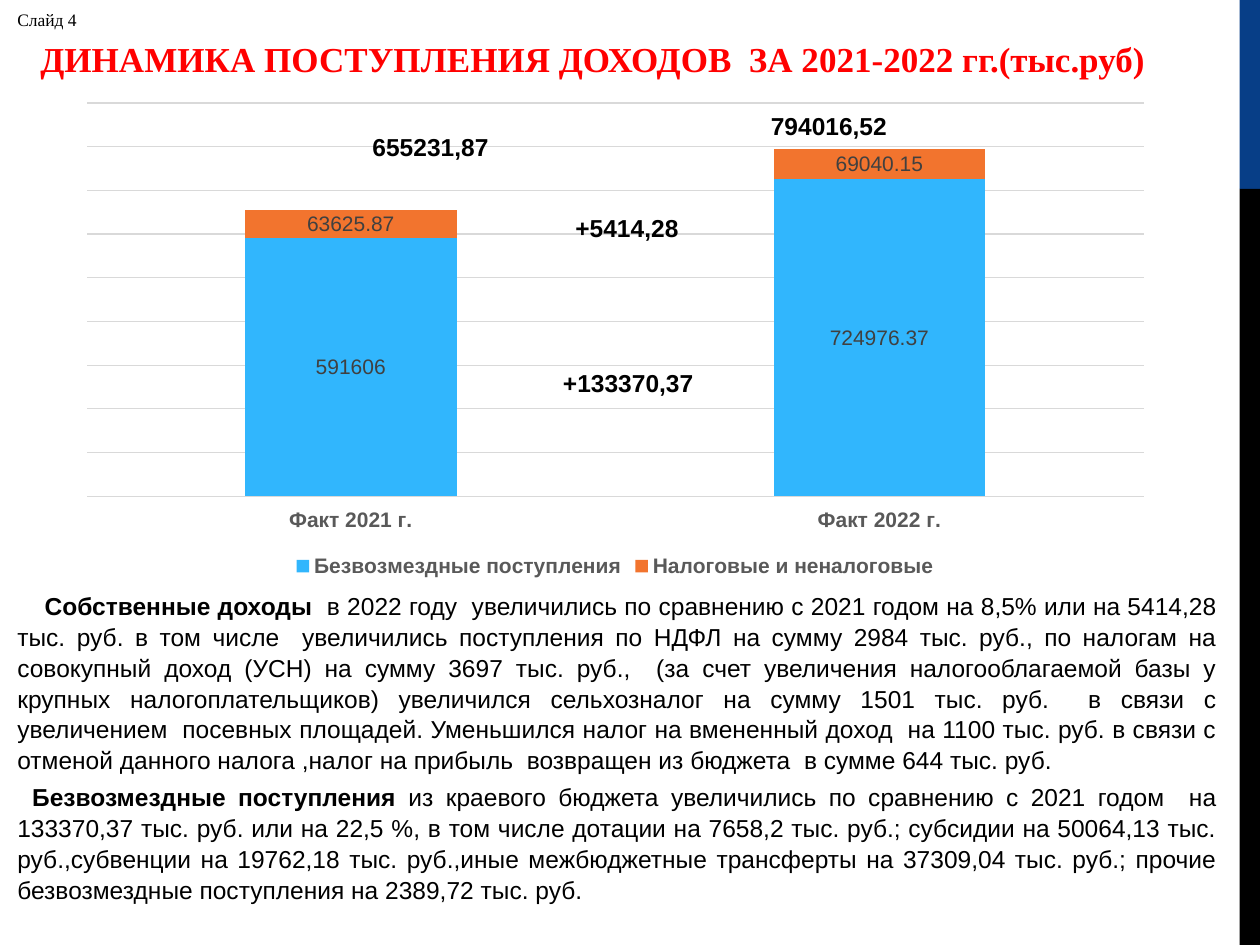
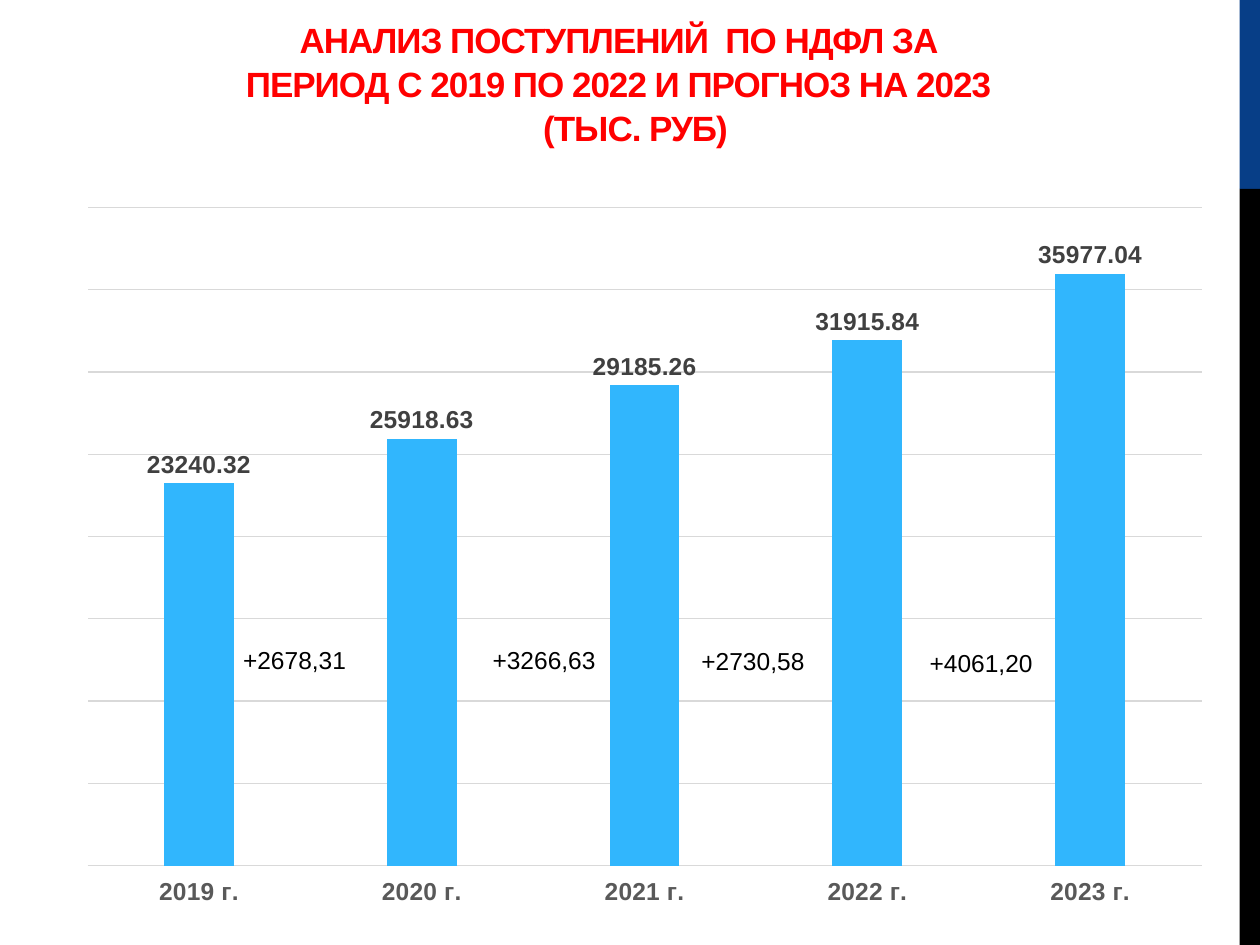
"""Builds two slides on budget income: growth by source and income tax by year."""
from pptx import Presentation
from pptx.chart.data import CategoryChartData
from pptx.dml.color import RGBColor
from pptx.enum.chart import XL_CHART_TYPE as ChartType
from pptx.enum.chart import XL_LABEL_POSITION as LabelPosition
from pptx.enum.chart import XL_LEGEND_POSITION as LegendPosition
from pptx.enum.chart import XL_TICK_LABEL_POSITION as TickLabels
from pptx.enum.chart import XL_TICK_MARK as TickMark
from pptx.enum.shapes import MSO_SHAPE as Shape
from pptx.enum.text import MSO_ANCHOR as Anchor
from pptx.enum.text import PP_ALIGN as Align
from pptx.util import Cm, Pt

COLORS = {
    "navy": "073E87", "black": "000000", "red": "FF0000", "sky": "31B6FD",
    "orange": "F2742E", "grid": "D9D9D9", "axis": "595959", "label": "404040",
}
SANS, SERIF = "Arial", "Times New Roman"

OWN_INCOME = (
    "в 2022 году  увеличились по сравнению с 2021 годом на 8,5% или на 5414,28 тыс. руб. "
    "в том числе  увеличились поступления по НДФЛ на сумму 2984 тыс. руб., по налогам на "
    "совокупный доход (УСН) на сумму 3697 тыс. руб.,  (за счет увеличения налогооблагаемой "
    "базы у крупных налогоплательщиков) увеличился сельхозналог на сумму 1501 тыс. руб.  "
    "в связи с увеличением  посевных площадей. Уменьшился налог на вмененный доход  на 1100 "
    "тыс. руб. в связи с отменой данного налога ,налог на прибыль  возвращен из бюджета  "
    "в сумме 644 тыс. руб."
)
GRANTS = (
    " из краевого бюджета увеличились по сравнению с 2021 годом  на 133370,37 тыс. руб. "
    "или на 22,5 %, в том числе дотации на 7658,2 тыс. руб.; субсидии на 50064,13 тыс. "
    "руб.,субвенции на 19762,18 тыс. руб.,иные межбюджетные трансферты на 37309,04 тыс. "
    "руб.; прочие безвозмездные поступления на 2389,72 тыс. руб."
)


def rgb(name):
    """Return the named colour."""
    return RGBColor.from_string(COLORS[name])


class Deck:
    """Holds the style and the current slide."""

    def __init__(self):
        """Start an empty 4:3 deck."""
        self.deck = Presentation()
        self.deck.slide_width, self.deck.slide_height = Cm(25.4), Cm(19.05)
        self.page = None

    def new_page(self):
        """Add a slide with the two side bands."""
        self.page = self.deck.slides.add_slide(self.deck.slide_layouts[6])
        for color, top, height in (("navy", 0, 3.81), ("black", 3.81, 15.24)):
            band = self.page.shapes.add_shape(
                Shape.RECTANGLE, Cm(24.99), Cm(top), Cm(0.41), Cm(height))
            band.shadow.inherit = False
            band.fill.solid()
            band.fill.fore_color.rgb = rgb(color)
            band.line.fill.background()

    def font(self, font, size, color="black", bold=False, name=SANS):
        """Apply size, colour, weight and typeface to a font."""
        font.size, font.bold, font.name = Pt(size), bold, name
        font.color.rgb = rgb(color)

    def frame(self, left, top, width, height, wrap=True):
        """Add a text box and return its text frame."""
        box = self.page.shapes.add_textbox(Cm(left), Cm(top), Cm(width), Cm(height))
        box.text_frame.word_wrap = wrap
        return box.text_frame

    def label(self, text, left, top, width, height=0.86, size=14, wrap=False, **style):
        """Add a one-line text box."""
        para = self.frame(left, top, width, height, wrap).paragraphs[0]
        para.text = text
        self.font(para.font, size, **style)

    def title(self, lines, left, top, width, height, name=SANS, spacing=0, shift=0):
        """Add a centred red title, moving its later lines right by shift."""
        frame = self.frame(left, top, width, height)
        frame.vertical_anchor = Anchor.BOTTOM if len(lines) > 1 else Anchor.TOP
        for index, line in enumerate(lines):
            para = frame.paragraphs[0] if index == 0 else frame.add_paragraph()
            para.text, para.alignment = line, Align.CENTER
            para.line_spacing = 1.05
            properties = para._p.get_or_add_pPr()
            if index:
                properties.set("marL", str(Cm(shift)))
            self.font(para.font, 20, "red", True, name)
            if spacing:
                properties.get_or_add_defRPr().set("spc", str(spacing))

    def body(self, items, left, top, width, height):
        """Add justified paragraphs that open with a bold phrase."""
        frame = self.frame(left, top, width, height)
        for index, (lead, text, indent) in enumerate(items):
            para = frame.paragraphs[0] if index == 0 else frame.add_paragraph()
            para.alignment, para.line_spacing = Align.JUSTIFY, 1.05
            if index:
                para.space_before = Pt(3.6)
            para._p.get_or_add_pPr().set("indent", str(Cm(indent)))
            for words, bold in ((lead, True), (text, False)):
                span = para.add_run()
                span.text = words
                self.font(span.font, 14, bold=bold)

    def columns(self, kind, place, categories, series, top_value, step, gap, overlap,
                axis_size, label_size, bold_labels=False, axis_line=False, legend=False):
        """Add a column chart with a hidden value axis; series hold name, colour, values."""
        data = CategoryChartData()
        data.categories = categories
        for name, color, values in series:
            data.add_series(name, values)
        chart = self.page.shapes.add_chart(kind, *map(Cm, place), data).chart
        self.font(chart.font, 10)
        chart.has_title = False
        chart.has_legend = legend
        if legend:
            chart.legend.position = LegendPosition.BOTTOM
            chart.legend.include_in_layout = False
            self.font(chart.legend.font, 12, "axis", True)

        value_axis = chart.value_axis
        value_axis.minimum_scale, value_axis.maximum_scale = 0, top_value
        value_axis.major_unit = step
        value_axis.visible = False
        value_axis.has_major_gridlines = True
        self.hairline(value_axis.major_gridlines.format.line)

        category_axis = chart.category_axis
        category_axis.major_tick_mark = TickMark.NONE
        category_axis.tick_label_position = TickLabels.LOW
        self.font(category_axis.tick_labels.font, axis_size, "axis", True)
        if axis_line:
            self.hairline(category_axis.format.line)
        else:
            category_axis.format.line.fill.background()

        plot = chart.plots[0]
        plot.gap_width, plot.overlap, plot.vary_by_categories = gap, overlap, False
        stacked = kind == ChartType.COLUMN_STACKED
        for drawn, (name, color, values) in zip(plot.series, series):
            drawn.format.fill.solid()
            drawn.format.fill.fore_color.rgb = rgb(color)
            drawn.invert_if_negative = False
            labels = drawn.data_labels
            labels.show_value = True
            labels.position = LabelPosition.CENTER if stacked else LabelPosition.OUTSIDE_END
            self.font(labels.font, label_size, "label", bold_labels)

    def hairline(self, line):
        """Give a line the thin grid style."""
        line.color.rgb = rgb("grid")
        line.width = Pt(0.75)


def income_page(deck):
    """Draw income by source with its explanation."""
    deck.new_page()
    deck.body([("Собственные доходы  ", OWN_INCOME, 0.55),
               ("Безвозмездные поступления", GRANTS, 0.3)], 0.1, 11.76, 24.69, 7.01)
    deck.title(["ДИНАМИКА ПОСТУПЛЕНИЯ ДОХОДОВ  ЗА 2021-2022 гг.(тыс.руб)"],
               -1.4, 0.58, 26.7, 1.09, SERIF)
    deck.label("Слайд 4", 0.1, 0.05, 1.73, 0.69, size=10, name=SERIF)
    deck.columns(
        ChartType.COLUMN_STACKED, (1.3, 1.88, 22.2, 9.86),
        ["Факт 2021 г.", "Факт 2022 г."],
        [("Безвозмездные поступления", "sky", (591606, 724976.37)),
         ("Налоговые и неналоговые", "orange", (63625.87, 69040.15))],
        900000, 100000, gap=150, overlap=100, axis_size=12, label_size=12, legend=True)
    for text, left, top, width in (
            ("655231,87", 7.26, 2.54, 2.87), ("+5414,28", 11.35, 4.17, 2.59),
            ("+133370,37", 11.1, 7.29, 3.15), ("794016,52", 15.29, 2.11, 2.87)):
        deck.label(text, left, top, width, bold=True)


def tax_page(deck):
    """Draw income tax by year with the yearly growth."""
    deck.new_page()
    deck.title(["АНАЛИЗ ПОСТУПЛЕНИЙ  ПО НДФЛ ЗА ПЕРИОД С 2019 ПО 2022 И ПРОГНОЗ НА 2023",
                "(ТЫС. РУБ)"], 4.5, 0.05, 15.93, 3.07, spacing=-60, shift=0.69)
    deck.columns(
        ChartType.COLUMN_CLUSTERED, (1.3, 3.89, 23.39, 14.66),
        [f"{year} г." for year in range(2019, 2024)],
        [("Series 1", "sky", (23240.32, 25918.63, 29185.26, 31915.84, 35977.04))],
        40000, 5000, gap=219, overlap=-27, axis_size=14, label_size=14,
        bold_labels=True, axis_line=True)
    for text, left, top in (("+2678,31", 4.65, 12.88), ("+3266,63", 9.68, 12.88),
                            ("+2730,58", 13.89, 12.9), ("+4061,20", 18.49, 12.93)):
        deck.label(text, left, top, 2.9, wrap=True)


def main():
    """Build and save the deck."""
    deck = Deck()
    income_page(deck)
    tax_page(deck)
    deck.deck.save("out.pptx")


if __name__ == "__main__":
    main()
